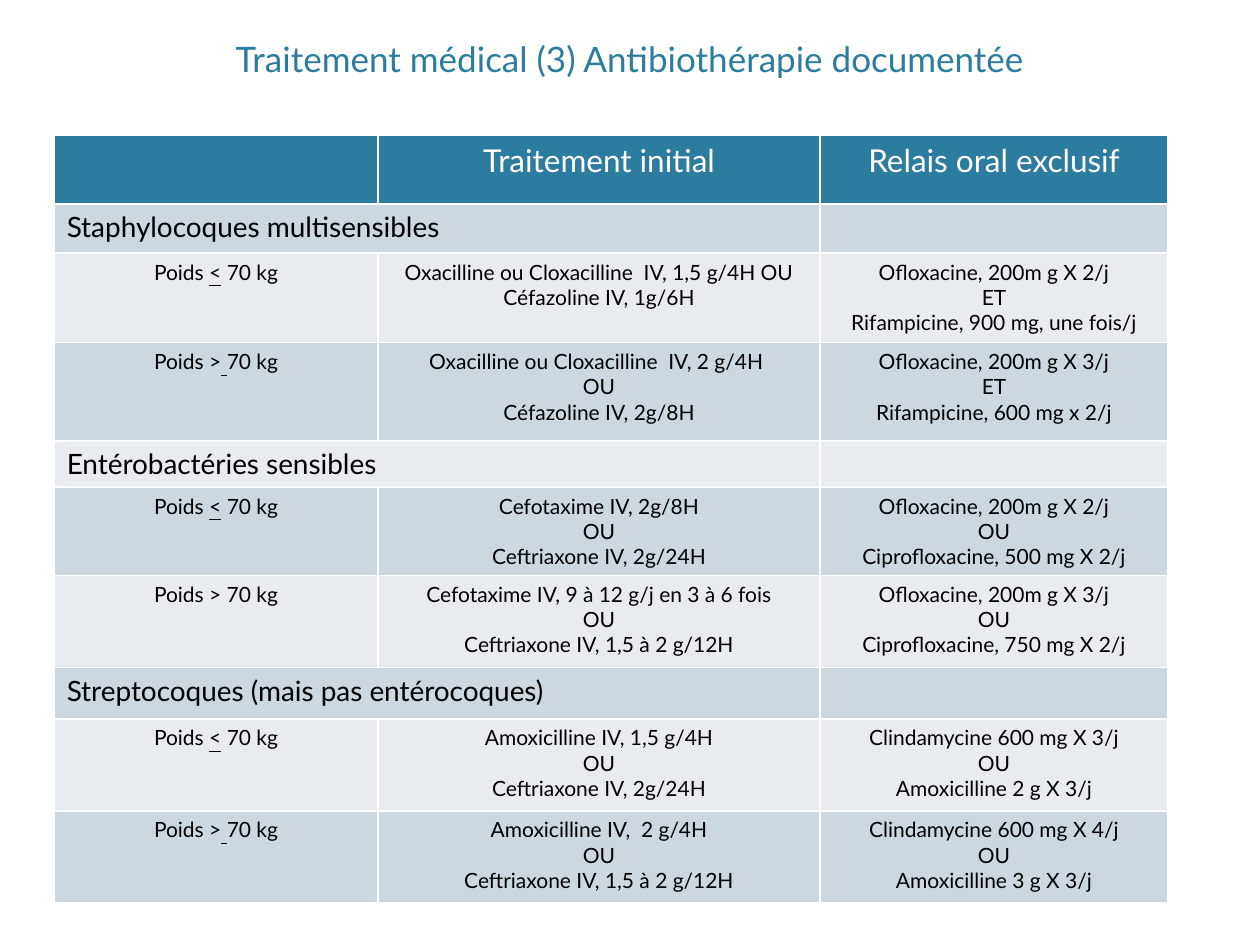
from pptx import Presentation
from pptx.util import Inches, Pt
from pptx.dml.color import RGBColor
from pptx.enum.text import PP_ALIGN, MSO_ANCHOR
from pptx.oxml.ns import qn
from lxml.etree import SubElement

THEME = {
    "font": "Lato",
    "accent": RGBColor.from_string("2C7C9F"),
    "white": RGBColor.from_string("FFFFFF"),
    "black": RGBColor.from_string("000000"),
    "bands": [RGBColor.from_string("CDD7DF"), RGBColor.from_string("E8ECF0")],
    "title": 20, "header": 18, "group": 16, "body": 12,
}
TITLE = "Traitement médical (3) Antibiothérapie documentée"
HEADER = ["", "Traitement initial", "Relais oral exclusif"]
UP_TO_70 = [("Poids ", False), ("<", True), (" 70 kg", False)]
OVER_70 = [("Poids >", False), (" ", True), ("70 kg", False)]
OVER_70_PLAIN = [("Poids > 70 kg", False)]
GROUPS = [
    ("Staphylocoques multisensibles", [
        (UP_TO_70,
         ["Oxacilline ou Cloxacilline  IV, 1,5 g/4H OU", "Céfazoline IV, 1g/6H"],
         ["Ofloxacine, 200m g X 2/j", "ET", "Rifampicine, 900 mg, une fois/j"]),
        (OVER_70,
         ["Oxacilline ou Cloxacilline  IV, 2 g/4H ", "OU", "Céfazoline IV, 2g/8H"],
         ["Ofloxacine, 200m g X 3/j", "ET", "Rifampicine, 600 mg x 2/j"]),
    ]),
    ("Entérobactéries sensibles", [
        (UP_TO_70,
         ["Cefotaxime IV, 2g/8H", "OU", "Ceftriaxone IV, 2g/24H"],
         ["Ofloxacine, 200m g X 2/j", "OU", "Ciprofloxacine, 500 mg X 2/j"]),
        (OVER_70_PLAIN,
         ["Cefotaxime IV, 9 à 12 g/j en 3 à 6 fois", "OU", "Ceftriaxone IV, 1,5 à 2 g/12H"],
         ["Ofloxacine, 200m g X 3/j", "OU", "Ciprofloxacine, 750 mg X 2/j"]),
    ]),
    ("Streptocoques (mais pas entérocoques)", [
        (UP_TO_70,
         ["Amoxicilline IV, 1,5 g/4H", "OU", "Ceftriaxone IV, 2g/24H"],
         ["Clindamycine 600 mg X 3/j", "OU", "Amoxicilline 2 g X 3/j"]),
        (OVER_70,
         ["Amoxicilline IV,  2 g/4H", "OU", "Ceftriaxone IV, 1,5 à 2 g/12H"],
         ["Clindamycine 600 mg X 4/j", "OU", "Amoxicilline 3 g X 3/j"]),
    ]),
]
COLS = [2.57, 3.51, 2.76]
ROWS = [0.55, 0.39, 0.71, 0.78, 0.35, 0.7, 0.73, 0.41, 0.73, 0.73]


def write(tf, paragraphs, size, color, align=PP_ALIGN.CENTER):
    for i, runs in enumerate(paragraphs):
        p = tf.add_paragraph() if i else tf.paragraphs[0]
        p.alignment = align
        p.font.name = THEME["font"]
        p.font.size = Pt(size)
        p.font.bold = False
        p.font.color.rgb = color
        for text, underlined in runs:
            r = p.add_run()
            r.text = text
            if underlined:
                r.font.underline = True
        if not runs:
            SubElement(p._p, qn("a:endParaRPr"), sz=str(size * 100))


def plain(lines):
    return [[(line, False)] if line else [] for line in lines]


def fill(cell, color):
    cell.fill.solid()
    cell.fill.fore_color.rgb = color


def add_title(s):
    tf = s.shapes.add_textbox(Inches(0.6), Inches(0.13), Inches(8.8), Inches(0.55)).text_frame
    tf.word_wrap = True
    tf.vertical_anchor = MSO_ANCHOR.BOTTOM
    write(tf, plain([TITLE]), THEME["title"], THEME["accent"])


def add_treatments(s):
    table = s.shapes.add_table(len(ROWS), len(COLS), Inches(0.43), Inches(1.07),
                               Inches(sum(COLS)), Inches(sum(ROWS))).table
    for col, width in zip(table.columns, COLS):
        col.width = Inches(width)
    for row, height in zip(table.rows, ROWS):
        row.height = Inches(height)
    for i in range(len(ROWS)):
        for j in range(len(COLS)):
            fill(table.cell(i, j), THEME["bands"][(i - 1) % 2] if i else THEME["accent"])

    for j, label in enumerate(HEADER):
        write(table.cell(0, j).text_frame, plain([label]), THEME["header"], THEME["white"])
    i = 1
    for group, doses in GROUPS:
        table.cell(i, 0).merge(table.cell(i, 1))
        for j, label in ((0, group), (1, ""), (2, "")):
            write(table.cell(i, j).text_frame, plain([label]), THEME["group"],
                  THEME["black"], PP_ALIGN.LEFT)
        for i, (weight, initial, oral) in enumerate(doses, i + 1):
            for j, paragraphs in enumerate(([weight], plain(initial), plain(oral))):
                write(table.cell(i, j).text_frame, paragraphs, THEME["body"], THEME["black"])
        i += 1


def main():
    prs = Presentation()
    prs.slide_width, prs.slide_height = Inches(10), Inches(7.5)
    s = prs.slides.add_slide(prs.slide_layouts[6])
    add_treatments(s)
    add_title(s)
    prs.save("out.pptx")


if __name__ == "__main__":
    main()
